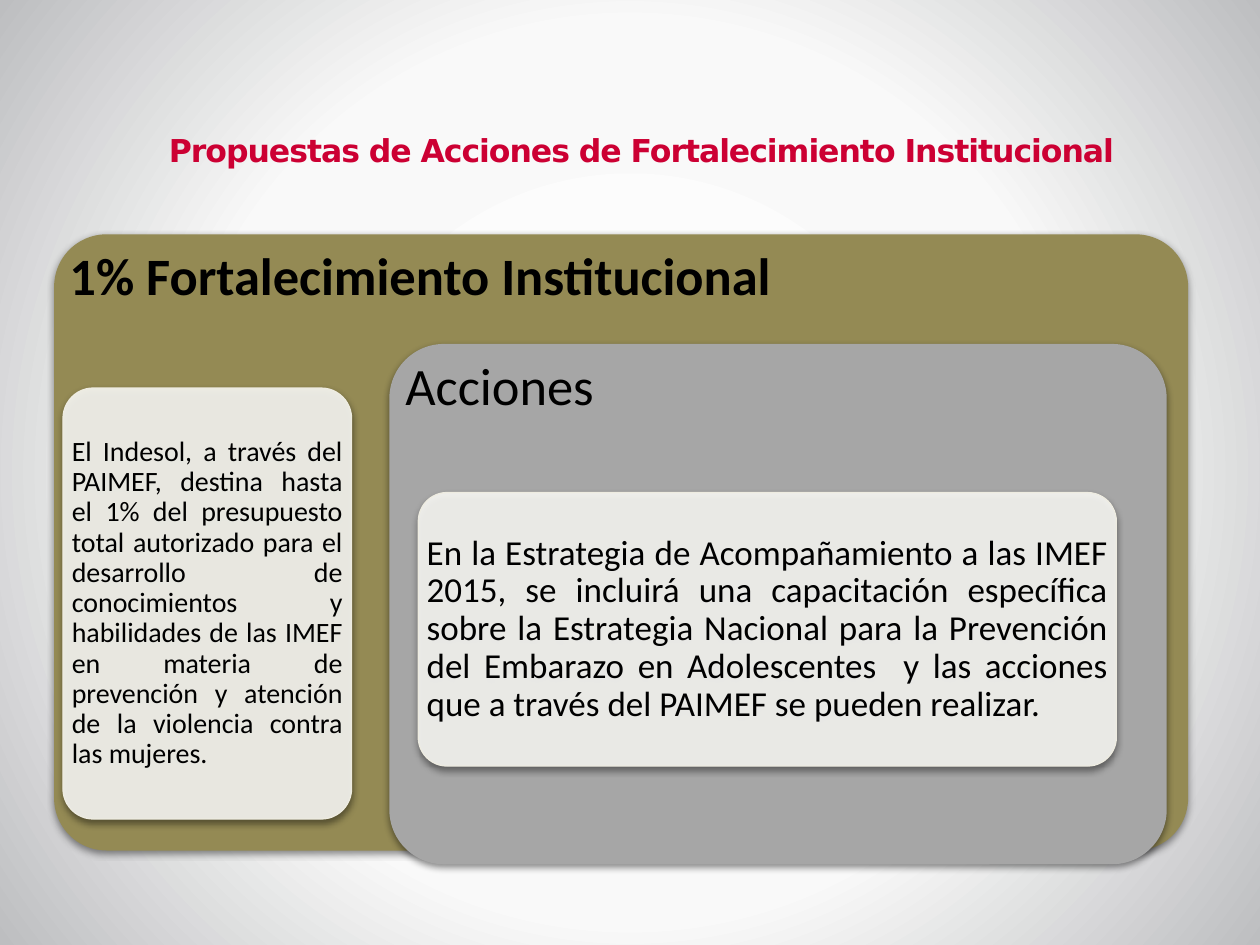
from pptx import Presentation
from pptx.dml.color import RGBColor
from pptx.enum.shapes import MSO_SHAPE
from pptx.enum.text import MSO_ANCHOR, PP_ALIGN
from pptx.oxml import parse_xml
from pptx.oxml.ns import nsdecls
from pptx.util import Inches, Pt


def color(hex_value):
    """Turn a hex string into a colour."""
    return RGBColor.from_string(hex_value)


def paint_background(slide):
    """Fill the slide with a radial gradient that is light in the centre."""
    stops = "".join(
        f'<a:gs pos="{position}000"><a:srgbClr val="{value}"/></a:gs>'
        for position, value in ((0, "FFFFFF"), (57, "F9F9F9"), (100, "BDBEC0"))
    )
    fill = slide.background.fill
    fill.solid()
    properties = slide.element.cSld.bg.bgPr
    properties.replace(properties[0], parse_xml(
        f'<a:gradFill {nsdecls("a")} rotWithShape="1"><a:gsLst>{stops}</a:gsLst>'
        '<a:path path="circle"><a:fillToRect l="50000" t="50000" r="50000" b="50000"/>'
        '</a:path></a:gradFill>'
    ))


def add_heading(slide, box, text):
    """Place and format the slide title."""
    heading = slide.shapes.title
    heading.left, heading.top, heading.width, heading.height = map(Inches, box)
    frame = heading.text_frame
    frame.vertical_anchor = MSO_ANCHOR.TOP
    frame.text = text
    paragraph = frame.paragraphs[0]
    paragraph.alignment = PP_ALIGN.CENTER
    font = paragraph.font
    font.name, font.size, font.bold = "DejaVu Sans", Pt(18), True
    font.color.rgb = color("CC0033")
    paragraph.runs[0]._r.get_or_add_rPr().set("spc", "-60")


def add_rounded_box(slide, box, text, size, fill, radius=0.105, bold=False):
    """Add a shadowed rounded box holding one paragraph and return it."""
    shape = slide.shapes.add_shape(MSO_SHAPE.ROUNDED_RECTANGLE, *map(Inches, box))
    shape.adjustments[0] = radius
    shape.fill.solid()
    shape.fill.fore_color.rgb = color(fill)
    shape.line.fill.background()
    shape.shadow.inherit = False
    shape._element.spPr.find(".//{*}effectLst").append(parse_xml(
        f'<a:outerShdw {nsdecls("a")} blurRad="{Pt(4)}" dist="{Pt(2)}" dir="5400000" '
        'rotWithShape="0"><a:srgbClr val="000000"><a:alpha val="45000"/></a:srgbClr>'
        '</a:outerShdw>'
    ))
    frame = shape.text_frame
    frame.word_wrap = True
    frame.margin_left = frame.margin_right = frame.margin_top = frame.margin_bottom = 0
    frame.vertical_anchor = MSO_ANCHOR.TOP
    frame.text = text
    paragraph = frame.paragraphs[0]
    paragraph.alignment = PP_ALIGN.LEFT
    paragraph.line_spacing = 0.9
    font = paragraph.font
    font.name, font.size, font.bold = "Calibri", Pt(size), bold
    font.color.rgb = color("000000")
    return shape


def add_card(slide, box, text, size):
    """Add a translucent pale card with justified text."""
    card = add_rounded_box(slide, box, text, size, "F8F8F4")
    tint = card._element.spPr.find("{*}solidFill/{*}srgbClr")
    tint.append(parse_xml(f'<a:alpha {nsdecls("a")} val="90000"/>'))
    card.line.color.rgb = color("EEECE1")
    card.line.width = Pt(0.75)
    card.text_frame.vertical_anchor = MSO_ANCHOR.MIDDLE
    card.text_frame.paragraphs[0].alignment = PP_ALIGN.JUSTIFY


def add_actions(slide, box):
    """Add the grey actions panel with its card."""
    left, top, _, _ = box
    add_rounded_box(slide, box, "Acciones", 30, "A6A6A6")
    add_card(
        slide, (left + 0.23, top + 1.18, 5.54, 2.17),
        "En la Estrategia de Acompañamiento a las IMEF 2015, se incluirá una "
        "capacitación específica sobre la Estrategia Nacional para la Prevención "
        "del Embarazo en Adolescentes  y las acciones que a través del PAIMEF se "
        "pueden realizar.", 20,
    )


def add_strengthening(slide, box):
    """Add the olive panel, its budget card and the nested actions panel."""
    left, top, _, _ = box
    add_rounded_box(slide, box, "1% Fortalecimiento Institucional", 30, "948A54",
                    radius=0.085, bold=True)
    add_card(
        slide, (left + 0.07, top + 1.22, 2.29, 3.42),
        "El Indesol, a través del PAIMEF, destina hasta el 1% del presupuesto "
        "total autorizado para el desarrollo de conocimientos y habilidades de "
        "las IMEF en materia de prevención y atención de la violencia contra las "
        "mujeres.", 16,
    )
    add_actions(slide, (left + 2.66, top + 0.87, 6.17, 4.13))


def main():
    """Build the slide and save it."""
    presentation = Presentation()
    presentation.slide_width, presentation.slide_height = Inches(10), Inches(7.5)
    slide = presentation.slides.add_slide(presentation.slide_layouts[5])
    paint_background(slide)
    add_heading(slide, (0.59, 0.99, 9, 0.5),
                "Propuestas de Acciones de Fortalecimiento Institucional")
    add_strengthening(slide, (0.43, 1.86, 9, 4.89))
    presentation.save("out.pptx")


if __name__ == "__main__":
    main()
